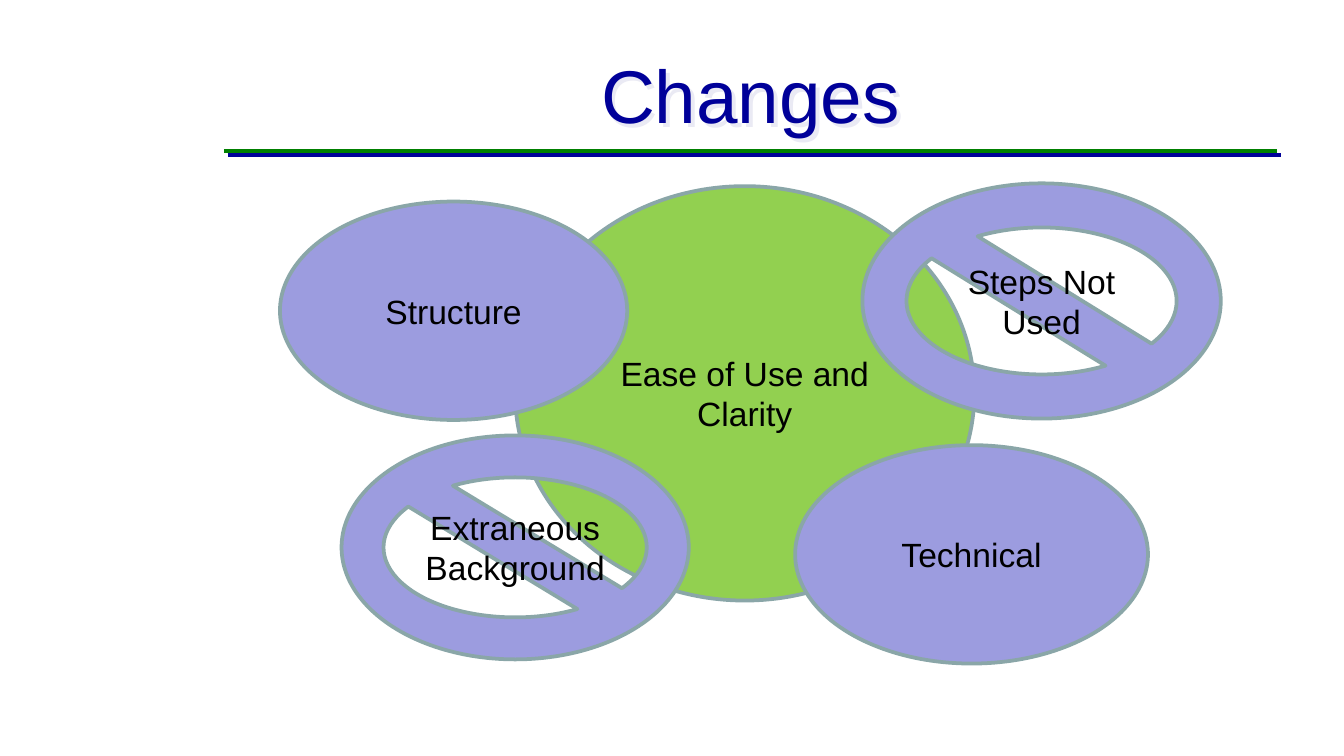
"""Build the Changes slide: one central idea ringed by four ovals."""
import dataclasses

import lxml.etree
import pptx
import pptx.dml.color
import pptx.enum.shapes
import pptx.enum.text
import pptx.oxml
import pptx.oxml.ns
import pptx.util

SCALE = 9525
FONT = "Arial"
NAVY = "000099"
GREEN = "92D050"
LILAC = "9C9CDF"
EDGE = "8AA6A8"
KIND = pptx.enum.shapes.MSO_SHAPE
DISC = KIND.FLOWCHART_CONNECTOR
BAN = KIND.NO_SYMBOL


@dataclasses.dataclass
class Oval:
    text: str
    left: int
    top: int
    width: int
    height: int
    kind: KIND = DISC
    fill: str = LILAC


OVALS = [
    Oval("Ease of Use and Clarity", 368, 133, 328, 296, fill=GREEN),
    Oval("Structure", 200, 144, 248, 156),
    Oval("Steps Not Used", 616, 131, 256, 168, BAN),
    Oval("Extraneous Background", 244, 311, 248, 160, BAN),
    Oval("Technical", 568, 318, 252, 156),
]


def px(size: int) -> pptx.util.Emu:
    return pptx.util.Emu(size * SCALE)


def tint(code: str) -> pptx.dml.color.RGBColor:
    return pptx.dml.color.RGBColor.from_string(code)


def shade(shape, code: str) -> None:
    effect: lxml.etree.ElementBase = pptx.oxml.parse_xml(
        f'<a:effectLst {pptx.oxml.ns.nsdecls("a")}>'
        f'<a:outerShdw dist="{pptx.util.Pt(2.83)}" dir="2700000" algn="ctr">'
        f'<a:srgbClr val="{code}"/></a:outerShdw></a:effectLst>'
    )
    shape._element.spPr.append(effect)


def write(frame, text: str, size: int, code: str) -> None:
    frame.text = text
    frame.word_wrap = True
    frame.vertical_anchor = pptx.enum.text.MSO_ANCHOR.MIDDLE
    line = frame.paragraphs[0]
    line.alignment = pptx.enum.text.PP_ALIGN.CENTER
    font = line.runs[0].font
    font.name = FONT
    font.size = pptx.util.Pt(size)
    font.color.rgb = tint(code)


def draw_title(slide, text: str) -> None:
    title = slide.shapes.title
    title.left, title.top = px(160), px(22)
    title.width, title.height = px(752), px(90)
    write(title.text_frame, text, 40, NAVY)
    shade(title, "EAEAF4")


def draw_rule(slide) -> None:
    kind = pptx.enum.shapes.MSO_CONNECTOR.STRAIGHT
    rule = slide.shapes.add_connector(kind, px(160), px(108), px(912), px(108))
    rule.line.color.rgb = tint("008000")
    rule.line.width = pptx.util.Pt(2.25)
    shade(rule, NAVY)


def draw_oval(slide, oval: Oval) -> None:
    shape = slide.shapes.add_shape(
        oval.kind, px(oval.left), px(oval.top), px(oval.width), px(oval.height)
    )
    shape.shadow.inherit = False
    shape.fill.solid()
    shape.fill.fore_color.rgb = tint(oval.fill)
    shape.line.color.rgb = tint(EDGE)
    shape.line.width = pptx.util.Pt(2)
    write(shape.text_frame, oval.text, 18, "000000")


def main() -> None:
    deck = pptx.Presentation()
    deck.slide_width, deck.slide_height = px(960), px(540)
    slide = deck.slides.add_slide(deck.slide_layouts[5])
    draw_rule(slide)
    draw_title(slide, "Changes")
    for oval in OVALS:
        draw_oval(slide, oval)
    deck.save("out.pptx")


if __name__ == "__main__":
    main()
